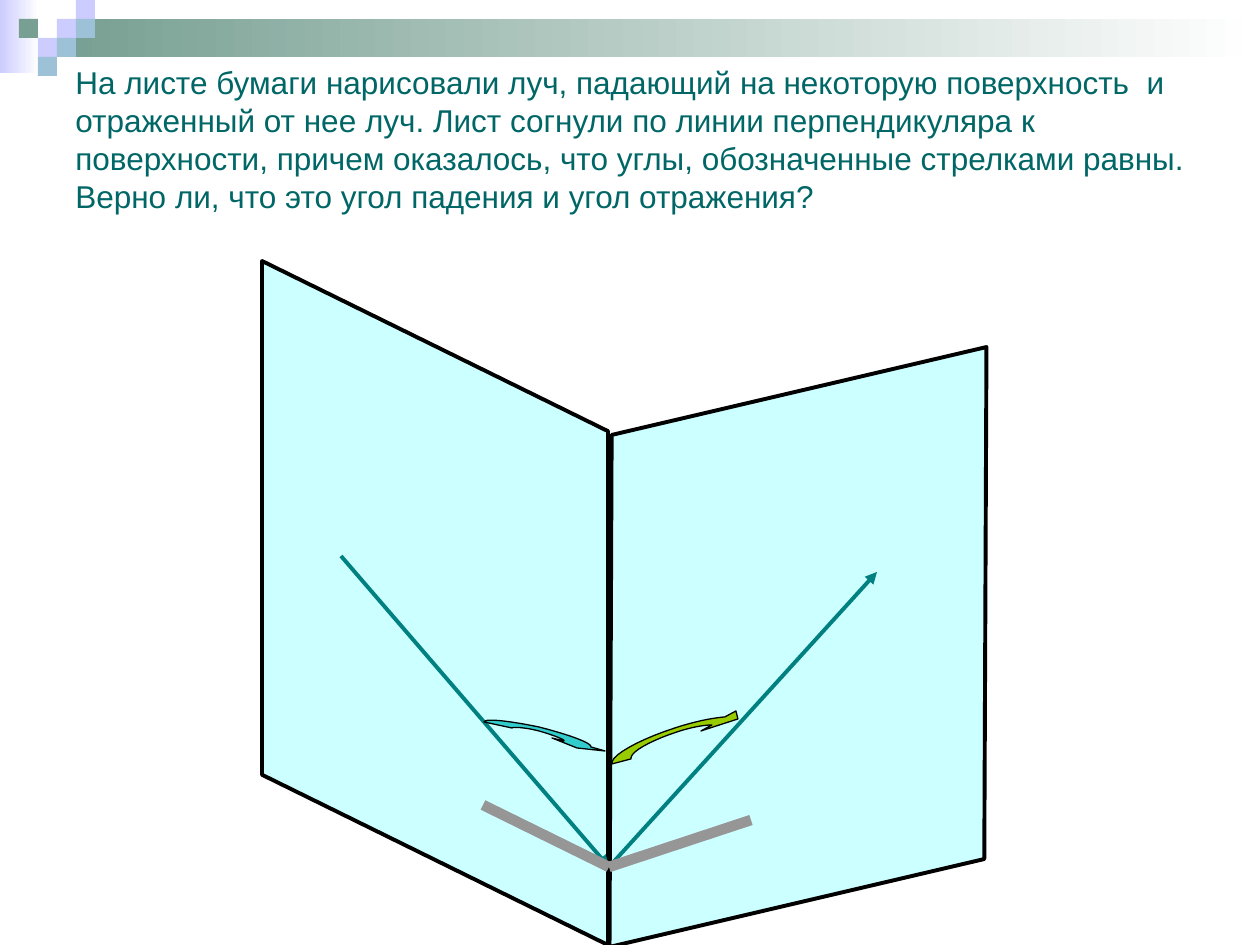
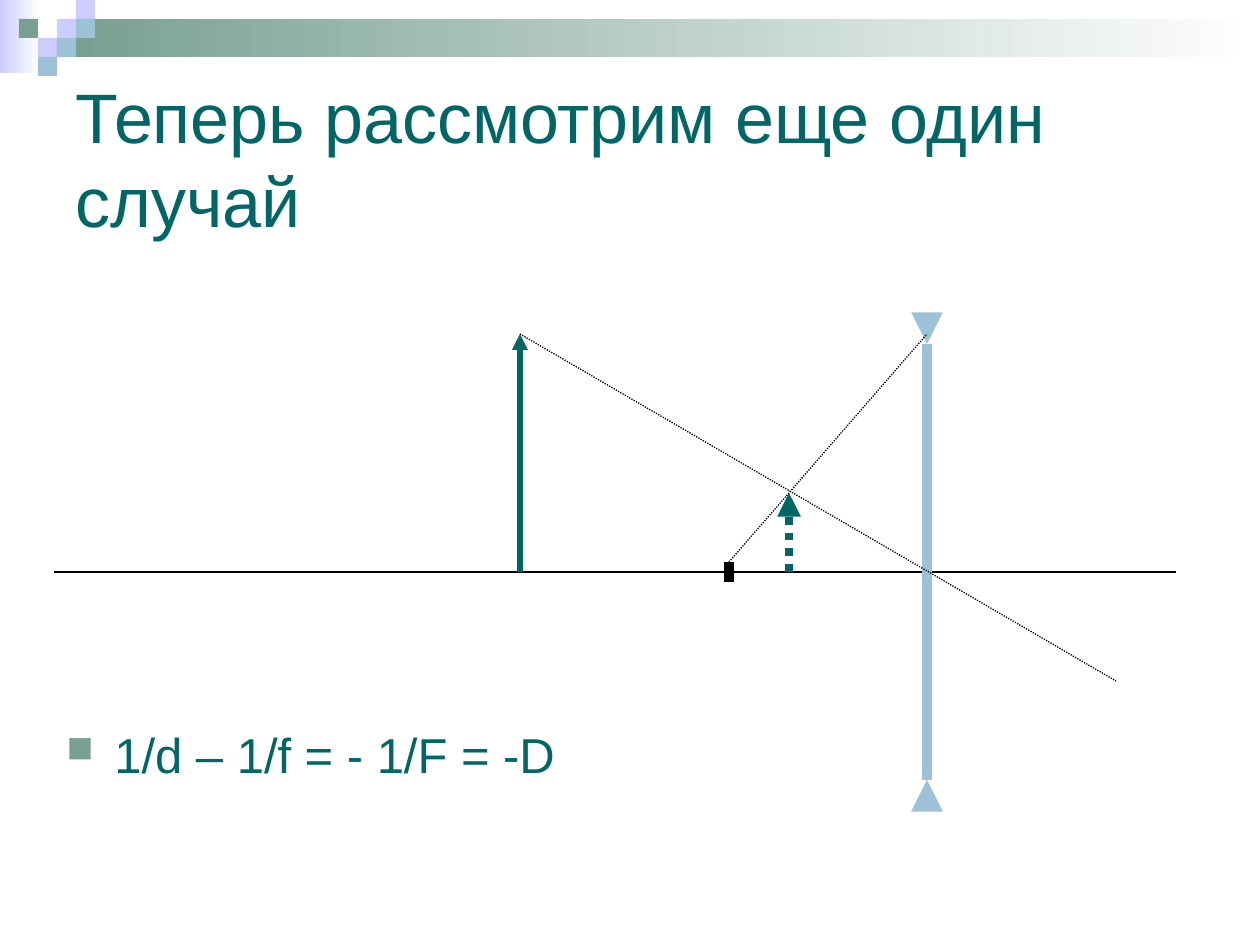
from dataclasses import dataclass

from lxml.etree import SubElement
from pptx import Presentation
from pptx.dml.color import RGBColor
from pptx.enum.dml import MSO_LINE
from pptx.enum.shapes import MSO_CONNECTOR, MSO_SHAPE as SHAPE
from pptx.enum.text import MSO_ANCHOR as ANCHOR
from pptx.oxml.ns import qn
from pptx.util import Emu, Pt


@dataclass(frozen=True)
class Theme:
    font: str = "Arial"
    text: str = "006666"
    lilac: str = "CCCCFF"
    sage: str = "779F92"
    sky: str = "9DC2D7"
    white: str = "FFFFFF"
    black: str = "000000"
    paper: str = "CCFFFF"
    ray: str = "008080"
    mirror: str = "969696"
    left_angle: str = "33CCCC"
    right_angle: str = "99CC00"
    title_size: int = 40
    question_size: int = 18
    formula_size: int = 28


T = Theme()
PX_PER_INCH = 126
SLIDE_W, SLIDE_H = 1260, 945


def px(n):
    return Emu(round(n * 914400 / PX_PER_INCH))


def rgb(value):
    return RGBColor.from_string(value)


# Basic parts
def add_block(s, kind, box, fill, fade_to=None, line=None, width=0):
    sp = s.shapes.add_shape(kind, *map(px, box))
    paint(sp, fill, fade_to, line, width)
    return sp


def paint(sp, fill, fade_to=None, line=None, width=0):
    sp.shadow.inherit = False
    if fade_to:
        sp.fill.gradient()
        sp.fill.gradient_angle = 0
        for stop, color in zip(sp.fill.gradient_stops, (fill, fade_to)):
            stop.color.rgb = rgb(color)
    else:
        sp.fill.solid()
        sp.fill.fore_color.rgb = rgb(fill)
    if line:
        sp.line.color.rgb = rgb(line)
        sp.line.width = Pt(width)
    else:
        sp.line.fill.background()


def add_line(s, origin, start, end, color, width, dash=None, arrow=False):
    x, y = origin
    ends = (x + start[0], y + start[1], x + end[0], y + end[1])
    cx = s.shapes.add_connector(MSO_CONNECTOR.STRAIGHT, *map(px, ends))
    cx.line.color.rgb = rgb(color)
    cx.line.width = Pt(width)
    if dash:
        cx.line.dash_style = dash
    sp_pr = cx.element.spPr
    if arrow:
        SubElement(sp_pr.find(qn("a:ln")), qn("a:tailEnd"), type="triangle")
    SubElement(sp_pr, qn("a:effectLst"))


def add_text(s, box, text, size, color=T.text, anchor=ANCHOR.TOP, bullet=None):
    tf = s.shapes.add_textbox(*map(px, box)).text_frame
    tf.word_wrap = True
    tf.vertical_anchor = anchor
    p = tf.paragraphs[0]
    r = p.add_run()
    r.text = text
    r.font.name = T.font
    r.font.size = Pt(size)
    r.font.color.rgb = rgb(color)
    if bullet:
        p_pr = p._p.get_or_add_pPr()
        p_pr.set("marL", str(px(48)))
        p_pr.set("indent", str(px(-48)))
        SubElement(SubElement(p_pr, qn("a:buClr")), qn("a:srgbClr"), val=T.sage)
        SubElement(p_pr, qn("a:buSzPct"), val="75000")
        SubElement(p_pr, qn("a:buChar"), char=bullet)


def bezier(p0, p1, p2, p3, steps=10):
    for i in range(1, steps + 1):
        t = i / steps
        u = 1 - t
        yield tuple(u**3 * a + 3 * u * u * t * b + 3 * u * t * t * c + t**3 * d
                    for a, b, c, d in zip(p0, p1, p2, p3))


def add_curved_outline(s, origin, start, segments, fill):
    """A segment is one point for a line, three points for a curve."""
    points = [start]
    for segment in segments:
        if len(segment) == 3:
            points.extend(bezier(points[-1], *segment))
        else:
            points.extend(segment)
    points = [(px(origin[0] + x), px(origin[1] + y)) for x, y in points]
    fb = s.shapes.build_freeform(*points[0])
    fb.add_line_segments(points[1:], close=True)
    paint(fb.convert_to_shape(), fill, line=T.black, width=0.75)


# Shared header decoration
def add_header(s, box):
    x, y, w = box
    unit = 19
    add_block(s, SHAPE.RECTANGLE, (x, y, 39, 73), T.lilac, fade_to=T.white)
    add_block(s, SHAPE.RECTANGLE, (x + 3 * unit, y + unit, w - 3 * unit, 2 * unit),
              T.sage, fade_to=T.white)
    squares = [(3, 1, T.lilac), (4, 0, T.lilac), (4, 1, T.sky), (2, 2, T.lilac),
               (1, 1, T.sage), (3, 2, T.sky), (2, 3, T.sky)]
    for col, row, color in squares:
        add_block(s, SHAPE.RECTANGLE,
                  (x + col * unit, y + row * unit, unit, unit), color)


def new_slide(prs, title, title_box, size):
    s = prs.slides.add_slide(prs.slide_layouts[6])
    add_header(s, (0, 0, SLIDE_W))
    add_text(s, title_box, title, size, anchor=ANCHOR.MIDDLE)
    return s


# Folded sheet with the two rays
def add_folded_sheet(s, origin):
    x, y = origin
    halves = [((-91, 169, 684, 346), 90, 0.492),
              ((362, 137, 504, 498), 346.8, 0.239)]
    for (left, top, w, h), rotation, slant in halves:
        half = add_block(s, SHAPE.PARALLELOGRAM, (x + left, y + top, w, h),
                         T.paper, line=T.black, width=2.25)
        half.adjustments[0] = slant
        half.rotation = rotation

    foot = (425, 606)
    add_line(s, origin, (157, 295), foot, T.ray, 2.25, arrow=True)
    add_line(s, origin, foot, (693, 311), T.ray, 2.25, arrow=True)

    # Curved arrows marking the angles
    add_curved_outline(s, origin, (380, 480), [
        [(382, 479), (369, 474), (355, 470)],
        [(340, 466), (328, 466), (328, 467)],
        [(300, 461)],
        [(301, 457), (326, 460), (355, 466)],
        [(386, 474), (408, 482), (407, 486)],
        [(421, 490)], [(393, 487)], [(368, 477)],
    ], T.left_angle)
    add_curved_outline(s, origin, (528, 464), [
        [(519, 464), (505, 467), (493, 471)],
        [(466, 480), (446, 491), (447, 498)],
        [(428, 503)],
        [(426, 495), (454, 479), (491, 467)],
        [(509, 461), (528, 457), (541, 456)],
        [(552, 450)], [(554, 458)], [(517, 470)],
    ], T.right_angle)

    # Reflecting surface
    for edge in ((299, 544), (567, 559)):
        add_line(s, origin, foot, edge, T.mirror, 6)


# Diverging lens with the object and its image
def add_lens_diagram(s, box):
    x, y, w, h = box
    origin = (x, y)
    axis, lens, focus, tip = h // 2 + 10, 873, 675, 20
    object_x, object_top = 466, 10
    image_x, image_top = 735, 169
    dots = MSO_LINE.ROUND_DOT

    add_line(s, origin, (0, axis), (w, axis), T.black, 0.75)
    add_line(s, origin, (lens, tip), (lens, h - tip), T.sky, 6)
    for outer, inner in ((0, tip), (h, h - tip)):
        add_line(s, origin, (lens, outer), (lens, inner), T.sky, 6, arrow=True)
    add_line(s, origin, (object_x, axis), (object_x, object_top), T.text, 3, arrow=True)
    add_line(s, origin, (object_x, object_top), (1062, 357), T.black, 0.75, dots)
    add_line(s, origin, (focus, axis - 10), (lens, object_top), T.black, 0.75, dots)
    add_line(s, origin, (focus, axis - 10), (focus, axis + 10), T.black, 6)
    add_line(s, origin, (image_x, axis), (image_x, image_top), T.text, 4.5, dots,
             arrow=True)


def build_reflection_slide(prs):
    question = ("На листе бумаги нарисовали луч, падающий на некоторую поверхность  и "
                "отраженный от нее луч. Лист согнули по линии перпендикуляра к "
                "поверхности, причем оказалось, что углы, обозначенные стрелками "
                "равны. Верно ли, что это угол падения и угол отражения?")
    s = new_slide(prs, question, (63, 26, 1134, 226), T.question_size)
    add_folded_sheet(s, (184, 261))


def build_lens_slide(prs):
    s = new_slide(prs, "Теперь рассмотрим еще один случай", (63, 63, 1134, 189),
                  T.title_size)
    add_text(s, (54, 718, 1134, 68), "1/d – 1/f = - 1/F = -D", T.formula_size,
             bullet="■")
    add_lens_diagram(s, (54, 324, 1122, 476))


def main():
    prs = Presentation()
    prs.slide_width, prs.slide_height = px(SLIDE_W), px(SLIDE_H)
    build_reflection_slide(prs)
    build_lens_slide(prs)
    prs.save("out.pptx")


if __name__ == "__main__":
    main()
